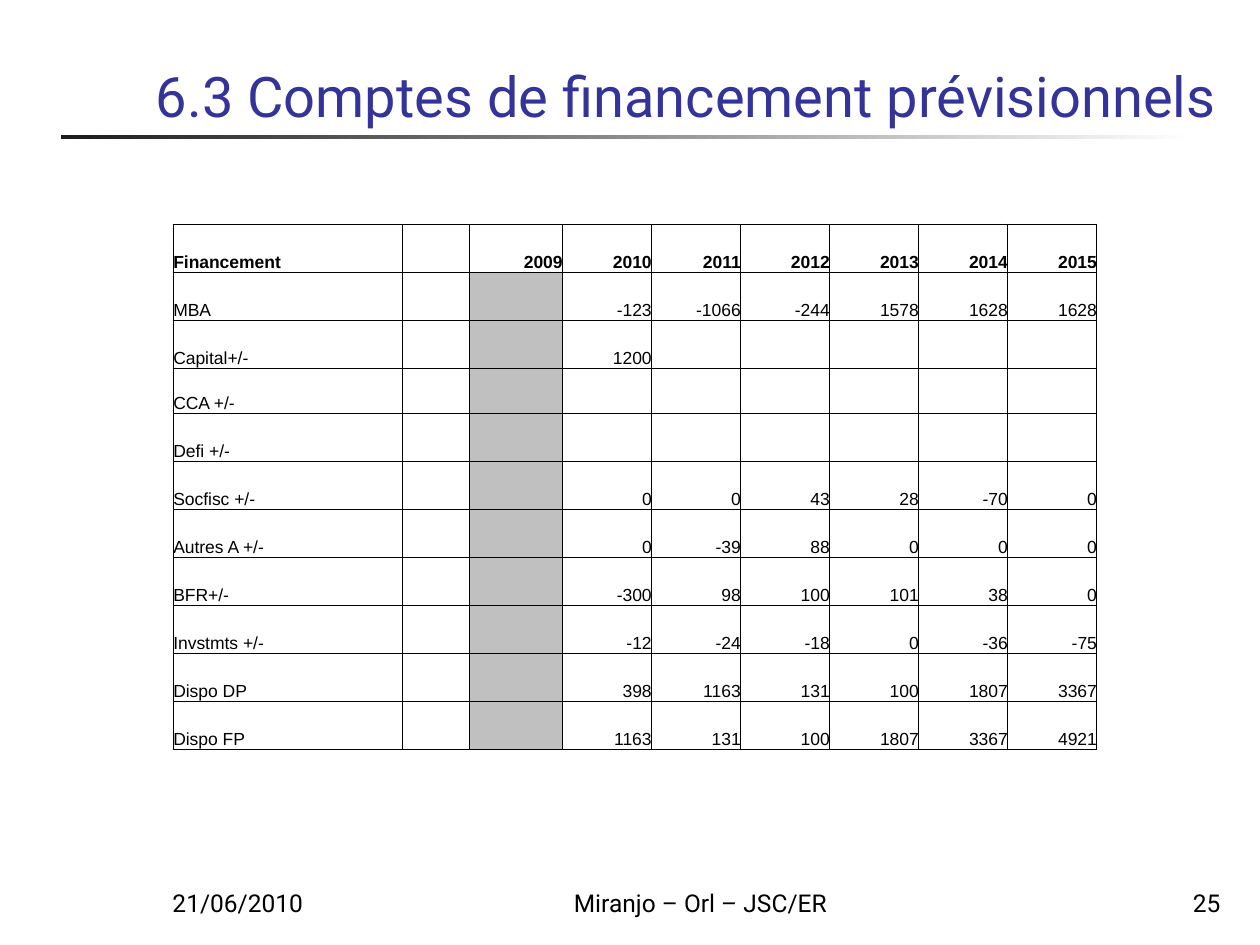
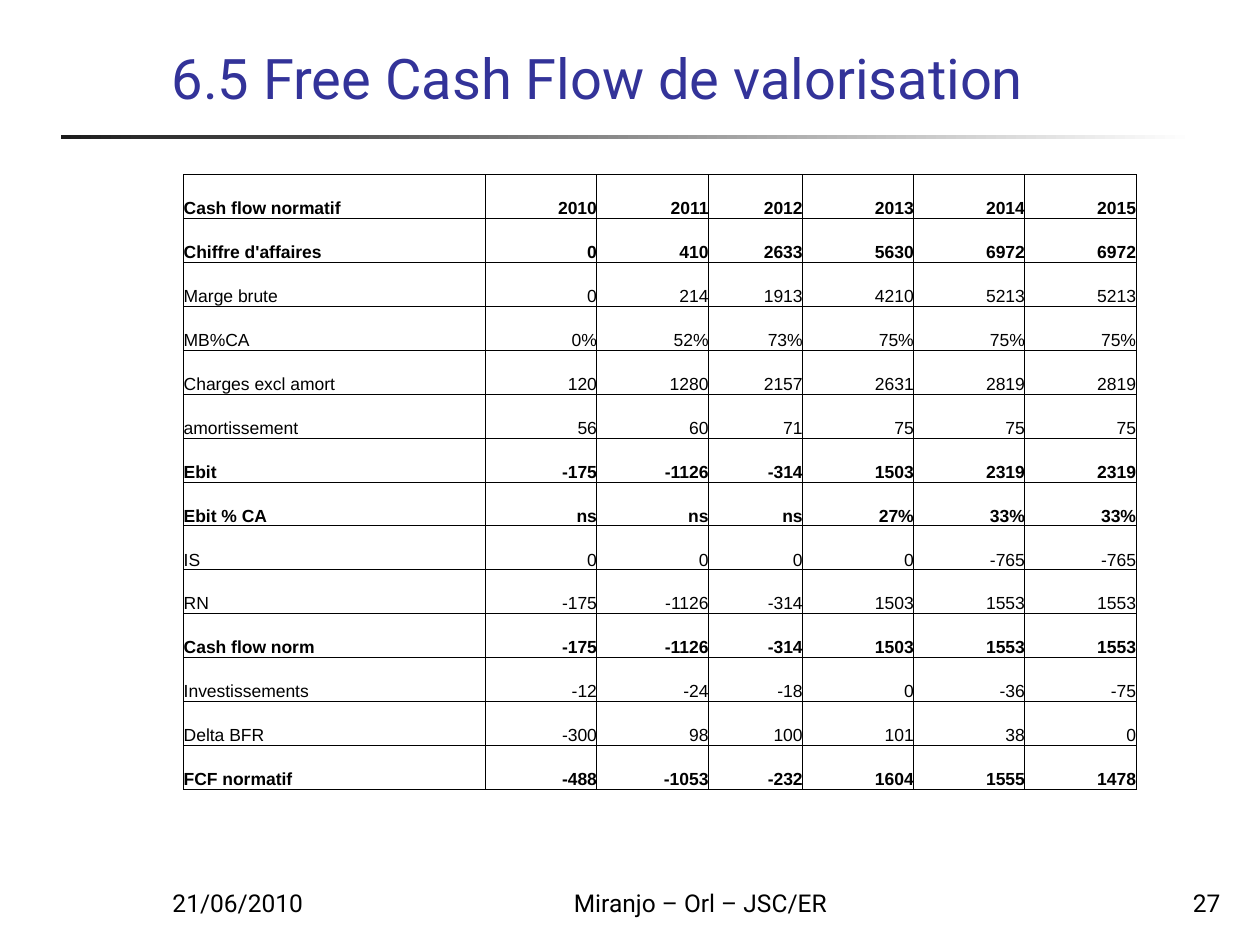
"""Builds two slides of financial forecasts, each a ruled table under a shared title and footer."""
from lxml import etree
from pptx import Presentation
from pptx.dml.color import RGBColor
from pptx.enum.shapes import MSO_SHAPE
from pptx.enum.text import MSO_ANCHOR, PP_ALIGN
from pptx.oxml import parse_xml
from pptx.oxml.ns import nsdecls
from pptx.util import Pt

COLORS = {"text": "000000", "title": "333399", "grey": "C0C0C0",
          "rule_start": "1C1C1C", "rule_end": "FFFFFF"}
TITLE_FONT, TABLE_FONT = "Roboto", "Arial"

FINANCING = """Financement||2009|2010|2011|2012|2013|2014|2015
MBA|||-123|-1066|-244|1578|1628|1628
Capital+/-|||1200|||||
CCA +/-||||||||
Defi +/-||||||||
Socfisc +/-|||0|0|43|28|-70|0
Autres A +/-|||0|-39|88|0|0|0
BFR+/-|||-300|98|100|101|38|0
Invstmts +/-|||-12|-24|-18|0|-36|-75
Dispo DP|||398|1163|131|100|1807|3367
Dispo FP|||1163|131|100|1807|3367|4921"""

CASH_FLOW = """Cash flow normatif|2010|2011|2012|2013|2014|2015
Chiffre d'affaires|0|410|2633|5630|6972|6972
Marge brute|0|214|1913|4210|5213|5213
MB%CA|0%|52%|73%|75%|75%|75%
Charges excl amort|120|1280|2157|2631|2819|2819
amortissement|56|60|71|75|75|75
Ebit|-175|-1126|-314|1503|2319|2319
Ebit % CA|ns|ns|ns|27%|33%|33%
IS|0|0|0|0|-765|-765
RN|-175|-1126|-314|1503|1553|1553
Cash flow norm|-175|-1126|-314|1503|1553|1553
Investissements|-12|-24|-18|0|-36|-75
Delta BFR|-300|98|100|101|38|0
FCF normatif|-488|-1053|-232|1604|1555|1478"""

SLIDES = [
    {"title": "6.3 Comptes de financement prévisionnels", "title_at": (82, 26.5, 622, 50.5),
     "page": "25", "data": FINANCING, "at": (99, 128),
     "cols": [131, 38, 53.5] + [50.9] * 6, "row_height": 27.45, "short_rows": {3: 25.7},
     "bold_rows": {0}, "grey_col": 2},
    {"title": "6.5 Free Cash Flow de valorisation", "title_at": (91, 16.5, 613, 50.5),
     "page": "27", "data": CASH_FLOW, "at": (105, 99.8),
     "cols": [172.6, 63.5, 63.8, 53.8, 63.5, 63.5, 63.5], "row_height": 25.1, "short_rows": {},
     "bold_rows": {0, 1, 6, 7, 10, 13}, "grey_col": None},
]


def add_run(p, text, font, size, color, bold=False):
    r = p.add_run()
    r.text = text
    r.font.name = font
    r.font.size = Pt(size)
    r.font.bold = bold
    r.font.color.rgb = RGBColor.from_string(COLORS[color])


def add_text(s, box, text, size, color, align=PP_ALIGN.LEFT):
    tf = s.shapes.add_textbox(*map(Pt, box)).text_frame
    tf.word_wrap = True
    tf.vertical_anchor = MSO_ANCHOR.BOTTOM
    p = tf.paragraphs[0]
    p.alignment = align
    add_run(p, text, TITLE_FONT, size, color)


prs = Presentation()
prs.slide_width, prs.slide_height = Pt(720), Pt(540)

for item in SLIDES:
    s = prs.slides.add_slide(prs.slide_layouts[6])

    rule = s.shapes.add_shape(MSO_SHAPE.RECTANGLE, Pt(34.8), Pt(77), Pt(648), Pt(2.2))
    rule.shadow.inherit = False
    rule.line.fill.background()
    rule.fill.gradient()
    rule.fill.gradient_angle = 0
    for stop, name in zip(rule.fill.gradient_stops, ("rule_start", "rule_end")):
        stop.color.rgb = RGBColor.from_string(COLORS[name])

    add_text(s, (91.5, 492, 150, 36), "21/06/2010", 14, "text")
    add_text(s, (288, 492, 228, 36), "Miranjo – Orl – JSC/ER ", 14, "text", PP_ALIGN.CENTER)
    add_text(s, (554.5, 492, 150, 36), item["page"], 14, "text", PP_ALIGN.RIGHT)
    add_text(s, item["title_at"], item["title"], 32, "title")

    rows = [line.split("|") for line in item["data"].splitlines()]
    heights = [item["short_rows"].get(i, item["row_height"]) for i in range(len(rows))]
    size = sum(item["cols"]), sum(heights)
    table = s.shapes.add_table(len(rows), len(item["cols"]), *map(Pt, item["at"] + size)).table
    table.first_row = table.horz_banding = False
    for col, width in zip(table.columns, item["cols"]):
        col.width = Pt(width)
    for row, height in zip(table.rows, heights):
        row.height = Pt(height)

    for i, row in enumerate(rows):
        for j, text in enumerate(row):
            cell = table.cell(i, j)
            cell.margin_left = cell.margin_right = cell.margin_top = cell.margin_bottom = 0
            cell.vertical_anchor = MSO_ANCHOR.BOTTOM
            tcPr = cell._tc.get_or_add_tcPr()
            for side in ("lnL", "lnR", "lnT", "lnB"):
                tcPr.append(parse_xml(
                    f'<a:{side} {nsdecls("a")} w="{Pt(0.5)}"><a:solidFill>'
                    f'<a:srgbClr val="{COLORS["text"]}"/></a:solidFill></a:{side}>'))
            if i > 0 and j == item["grey_col"]:
                cell.fill.solid()
                cell.fill.fore_color.rgb = RGBColor.from_string(COLORS["grey"])
            else:
                cell.fill.background()
            if text:
                p = cell.text_frame.paragraphs[0]
                p.alignment = PP_ALIGN.RIGHT if j else PP_ALIGN.LEFT
                add_run(p, text, TABLE_FONT, 10, "text", i in item["bold_rows"])

prs.save("out.pptx")
